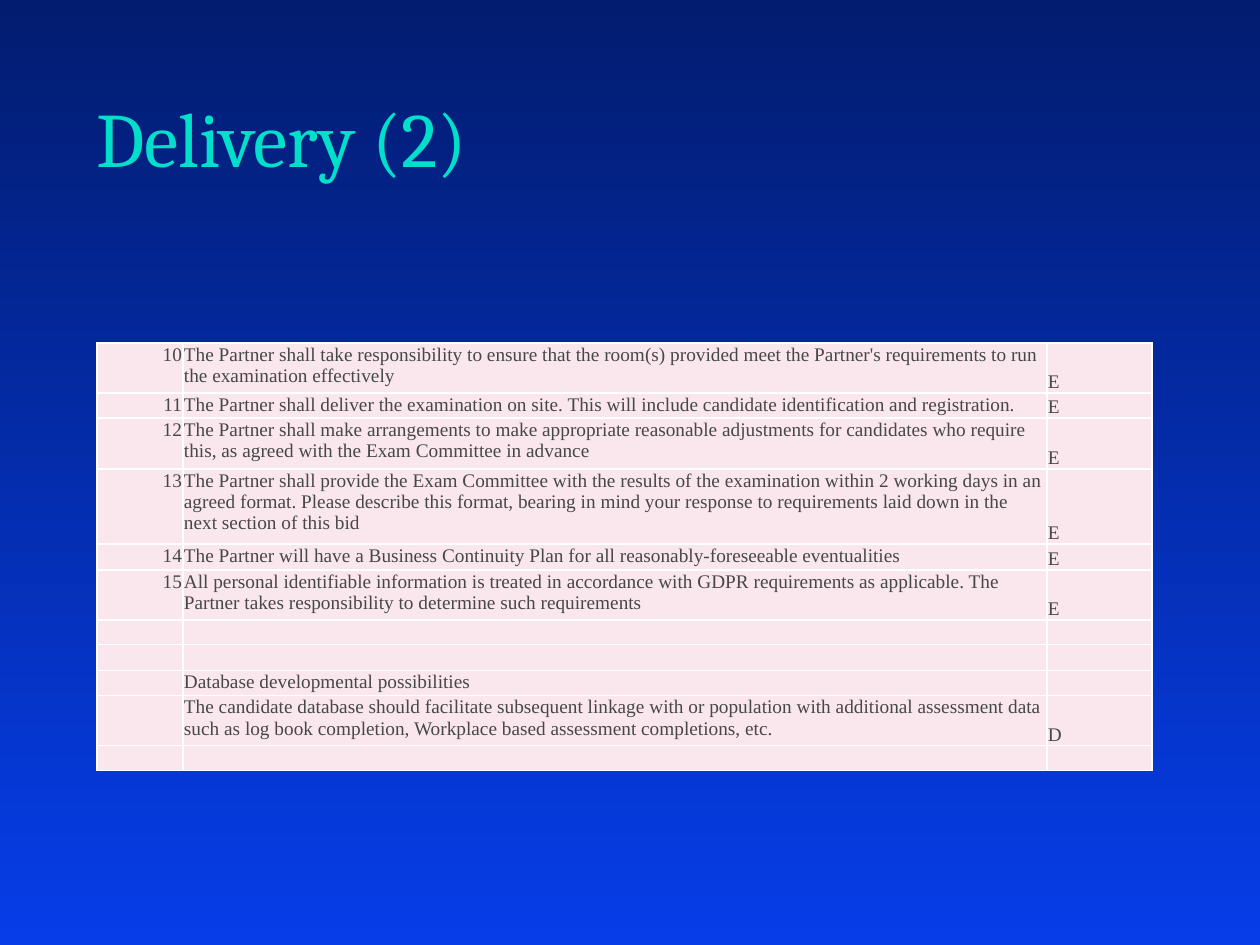
"""Build the "Delivery (2)" requirements slide."""
from lxml.etree import SubElement
from pptx import Presentation
from pptx.dml.color import RGBColor
from pptx.enum.text import MSO_ANCHOR as Anchor, PP_ALIGN as Align
from pptx.oxml.ns import qn
from pptx.util import Emu, Pt

NAVY = RGBColor(0x02, 0x1C, 0x70)
BLUE = RGBColor(0x06, 0x3D, 0xE8)
TEAL = RGBColor(0x00, 0xDF, 0xCA)
GREY = RGBColor(0x47, 0x47, 0x47)
PINK = RGBColor(0xF9, 0xE7, 0xED)
WHITE = RGBColor(0xFF, 0xFF, 0xFF)

COL_WIDTHS = [86, 864, 105]
ROWS = [
    (50, "10", "The Partner shall take responsibility to ensure that the room(s) provided meet "
     "the Partner's requirements to run the examination effectively", "E"),
    (25, "11", "The Partner shall deliver the examination on site. This will include candidate "
     "identification and registration.", "E"),
    (51, "12", "The Partner shall make arrangements to make appropriate reasonable adjustments "
     "for candidates who require this, as agreed with the Exam Committee in advance", "E"),
    (75, "13", "The Partner shall provide the Exam Committee with the results of the examination "
     "within 2 working days in an agreed format. Please describe this format, bearing in mind "
     "your response to requirements laid down in the next section of this bid", "E"),
    (26, "14", "The Partner will have a Business Continuity Plan for all reasonably-foreseeable "
     "eventualities", "E"),
    (50, "15", "All personal identifiable information is treated in accordance with GDPR "
     "requirements as applicable. The Partner takes responsibility to determine such "
     "requirements", "E"),
    (25, "", "", ""),
    (26, "", "", ""),
    (25, "", "Database developmental possibilities", ""),
    (50, "", "The candidate database should facilitate subsequent linkage with or population "
     "with additional assessment data such as log book completion, Workplace based assessment "
     "completions, etc.", "D"),
    (25, "", "", ""),
]
ALIGNS = [Align.RIGHT, Align.LEFT, Align.LEFT]
ANCHORS = [Anchor.TOP, Anchor.TOP, Anchor.BOTTOM]


def px(n):
    return Emu(round(n * 914400 / 126))


def set_background(s):
    fill = s.background.fill
    fill.gradient()
    fill.gradient_angle = 270
    for stop, color, position in zip(fill.gradient_stops, (NAVY, BLUE), (0, 1)):
        stop.color.rgb = color
        stop.position = position


def style_run(r, font, size, color):
    r.font.name = font
    r.font.size = Pt(size)
    r.font.color.rgb = color


def add_title(s, text):
    tf = s.shapes.add_textbox(px(84), px(32), px(1081), px(157)).text_frame
    tf.word_wrap = True
    tf.vertical_anchor = Anchor.BOTTOM
    tf.text = text
    style_run(tf.paragraphs[0].runs[0], "Cambria", 44, TEAL)


def add_borders(cell):
    tc_pr = cell._tc.get_or_add_tcPr()
    for side in ("L", "R", "T", "B"):
        ln = SubElement(tc_pr, qn(f"a:ln{side}"), w=str(Pt(1)))
        fill = SubElement(ln, qn("a:solidFill"))
        SubElement(fill, qn("a:srgbClr"), val=str(WHITE))


def fill_cell(cell, text, align, anchor):
    add_borders(cell)
    cell.fill.solid()
    cell.fill.fore_color.rgb = PINK
    cell.margin_left = cell.margin_right = cell.margin_top = px(1)
    cell.margin_bottom = 0
    cell.vertical_anchor = anchor
    p = cell.text_frame.paragraphs[0]
    p.text = text
    p.alignment = align
    for r in p.runs:
        style_run(r, "Times New Roman", 11, GREY)
    if not text:
        SubElement(p._p, qn("a:endParaRPr"), sz="1100")


def add_requirements(s):
    heights = [row[0] for row in ROWS]
    table = s.shapes.add_table(len(ROWS), len(COL_WIDTHS), px(97), px(343),
                               px(sum(COL_WIDTHS)), px(sum(heights))).table
    table.first_row = table.horz_banding = False
    for col, width in zip(table.columns, COL_WIDTHS):
        col.width = px(width)
    for row, (height, *texts) in zip(table.rows, ROWS):
        row.height = px(height)
        for cell, text, align, anchor in zip(row.cells, texts, ALIGNS, ANCHORS):
            fill_cell(cell, text, align, anchor)


def main():
    prs = Presentation()
    prs.slide_width, prs.slide_height = px(1260), px(945)
    s = prs.slides.add_slide(prs.slide_layouts[6])
    set_background(s)
    add_title(s, "Delivery (2)")
    add_requirements(s)
    prs.save("out.pptx")


if __name__ == "__main__":
    main()
